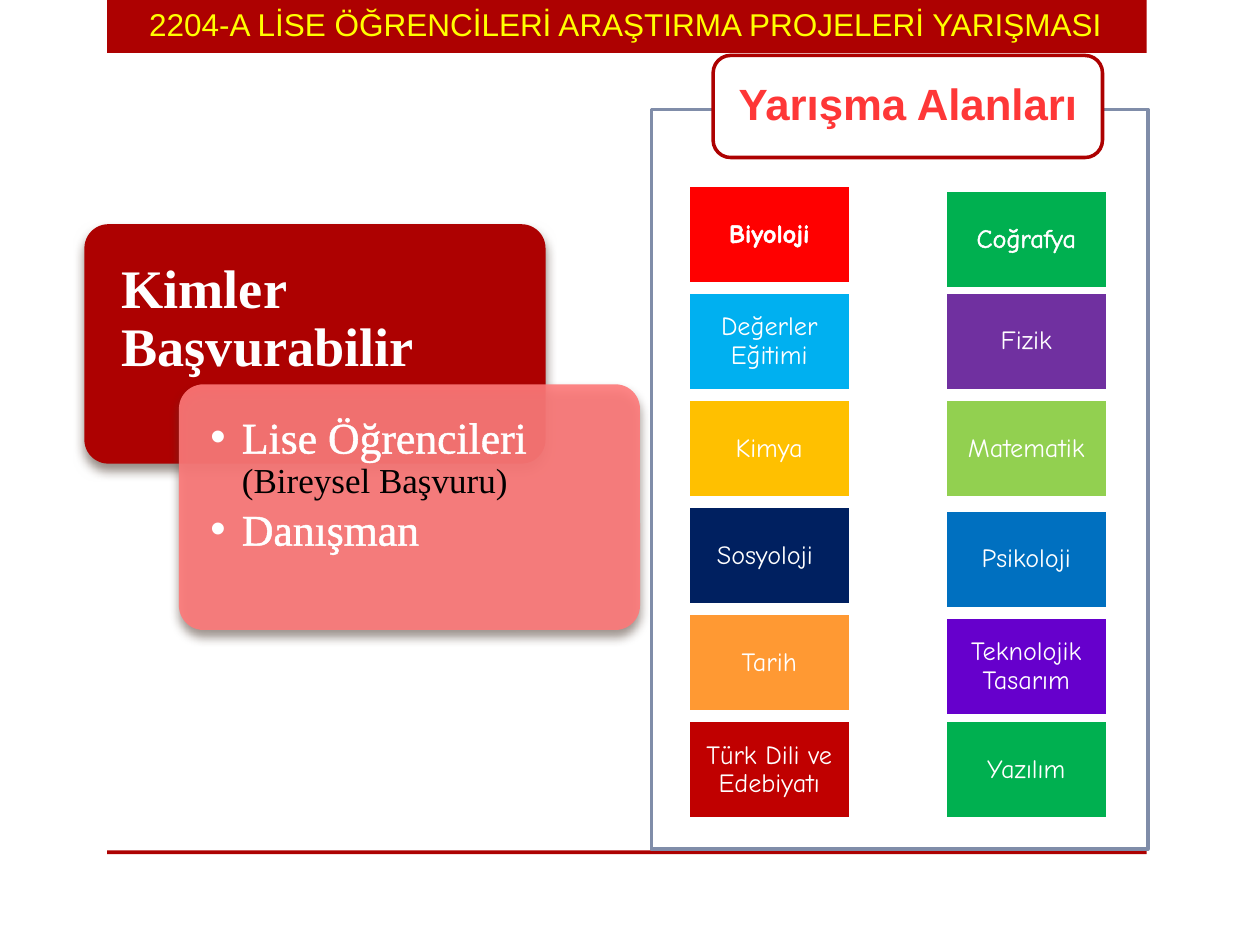
from dataclasses import dataclass

from lxml.etree import SubElement
from pptx import Presentation
from pptx.dml.color import RGBColor
from pptx.enum.shapes import MSO_SHAPE
from pptx.enum.text import MSO_ANCHOR, MSO_AUTO_SIZE, PP_ALIGN
from pptx.oxml import parse_xml
from pptx.oxml.ns import nsdecls, qn
from pptx.util import Inches, Pt


@dataclass(frozen=True)
class Theme:
    red: str = "AD0101"
    pink: str = "FE7979"
    heading: str = "FE3737"
    frame: str = "808DA9"
    shadow: str = "4E3B30"
    white: str = "FFFFFF"
    black: str = "000000"
    yellow: str = "FFFF00"
    sans: str = "Arial"
    serif: str = "Times New Roman"
    hand: str = "Comic Neue"
    card_size: int = 31
    large: int = 25
    note: int = 20
    title: int = 18
    tile: int = 15


class SlideBuilder:
    def __init__(self, prs, theme):
        self.theme = theme
        self.s = prs.slides.add_slide(prs.slide_layouts[1])

    def box(self, at, fill, line=None, rounded=None):
        kind = MSO_SHAPE.RECTANGLE if rounded is None else MSO_SHAPE.ROUNDED_RECTANGLE
        sp = self.s.shapes.add_shape(kind, *map(Inches, at))
        sp.shadow.inherit = False
        sp.fill.solid()
        sp.fill.fore_color.rgb = RGBColor.from_string(fill)
        if rounded is not None:
            sp.adjustments[0] = rounded
        if line:
            sp.line.color.rgb = RGBColor.from_string(line)
            sp.line.width = Pt(2)
        else:
            sp.line.fill.background()
        return sp

    def card(self, at, fill, opacity=100):
        sp = self.box(at, fill, rounded=0.1)
        color = sp.element.spPr.find(qn("a:solidFill"))[0]
        SubElement(color, qn("a:alpha"), val=str(opacity * 1000))
        effects = sp.element.spPr.find(qn("a:effectLst"))
        effects.append(parse_xml(
            f'<a:outerShdw {nsdecls("a")} blurRad="{Pt(6)}" dist="{Pt(4)}" '
            f'dir="5400000" rotWithShape="0"><a:srgbClr val="{self.theme.shadow}">'
            '<a:alpha val="60000"/></a:srgbClr></a:outerShdw>'))
        return sp

    def frame_text(self, sp, insets, anchor=MSO_ANCHOR.TOP):
        tf = sp.text_frame
        sides = ("margin_left", "margin_top", "margin_right", "margin_bottom")
        values = {"word_wrap": True, "auto_size": MSO_AUTO_SIZE.NONE,
                  "vertical_anchor": anchor, **dict(zip(sides, map(Inches, insets)))}
        for name, value in values.items():
            setattr(tf, name, value)
        return tf

    def paragraph(self, p, align=PP_ALIGN.LEFT, spacing=0.9, after=0):
        values = {"alignment": align, "line_spacing": spacing,
                  "space_before": Pt(0), "space_after": Pt(after)}
        for name, value in values.items():
            setattr(p, name, value)

    def run(self, p, text, font, size, color, bold=False, outline=False):
        r = p.add_run()
        r.text = text
        values = {"name": font, "size": Pt(size), "bold": bold}
        for name, value in values.items():
            setattr(r.font, name, value)
        r.font.color.rgb = RGBColor.from_string(color)
        if outline:
            r.font.element.insert(0, parse_xml(
                f'<a:ln {nsdecls("a")} w="{Pt(1.45)}"><a:solidFill>'
                f'<a:srgbClr val="{color}"/></a:solidFill></a:ln>'
            )) if hasattr(r.font, "element") else r._r.get_or_add_rPr().insert(0, parse_xml(
                f'<a:ln {nsdecls("a")} w="{Pt(1.45)}"><a:solidFill>'
                f'<a:srgbClr val="{color}"/></a:solidFill></a:ln>'))

    def label(self, sp, text, insets, font, size, color, anchor=MSO_ANCHOR.MIDDLE,
              align=PP_ALIGN.CENTER, **emphasis):
        p = self.frame_text(sp, insets, anchor).paragraphs[0]
        self.paragraph(p, align)
        self.run(p, text, font, size, color, **emphasis)

    def placeholder(self, index, at):
        sp = self.s.placeholders[index]
        for name, value in zip(("left", "top", "width", "height"), at):
            setattr(sp, name, Inches(value))
        sp.element.getparent().append(sp.element)
        return sp

    def title(self, text, at):
        t = self.theme
        sp = self.placeholder(0, at)
        p = self.frame_text(sp, (0.1, 0.05, 0.1, 0.05)).paragraphs[0]
        self.paragraph(p, PP_ALIGN.CENTER, 1.0)
        self.run(p, text, t.sans, t.title, t.yellow)

    def bullets(self, items, at):
        t = self.theme
        tf = self.frame_text(self.placeholder(1, at), (0.19,) * 4)
        for i, (text, note) in enumerate(items):
            p = tf.add_paragraph() if i else tf.paragraphs[0]
            self.paragraph(p, after=4)
            pPr = p._p.get_or_add_pPr()
            pPr.set("marL", str(Inches(0.25)))
            pPr.set("indent", str(-Inches(0.25)))
            SubElement(pPr, qn("a:buChar"), char="•")
            self.run(p, text, t.serif, t.large, t.white, outline=True)
            if note:
                self.run(p, note, t.serif, t.note, t.black)

    def tile(self, left, top, text, fill, **emphasis):
        t = self.theme
        sp = self.box((left, top, 1.29, 0.78), fill, t.white)
        self.label(sp, text, (0.06,) * 4, t.hand, t.tile, t.white, **emphasis)


COLUMNS = (
    (5.46, (
        ("Biyoloji", "FF0000", 0, {"bold": True, "outline": True}),
        ("Değerler Eğitimi", "00B0F0", 0, {}),
        ("Kimya", "FFC000", 0, {}),
        ("Sosyoloji ", "002060", 0, {}),
        ("Tarih", "FF9933", 0, {}),
        ("Türk Dili ve Edebiyatı", "C00000", 0, {}),
    )),
    (7.5, (
        ("Coğrafya", "00B050", 0.04, {"outline": True}),
        ("Fizik", "7030A0", 0, {}),
        ("Matematik", "92D050", 0, {}),
        ("Psikoloji", "0070C0", 0.03, {}),
        ("Teknolojik Tasarım", "6600CC", 0.03, {}),
        ("Yazılım", "00B050", 0, {}),
    )),
)


def main():
    prs = Presentation()
    prs.slide_width, prs.slide_height = Inches(10), Inches(7.5)
    t = Theme()
    b = SlideBuilder(prs, t)

    for top, height in ((0, 0.42), (6.75, 0.03)):
        b.box((0.85, top, 8.25, height), t.red)

    who = b.card((0.67, 1.78, 3.66, 1.9), t.red)
    b.label(who, "Kimler Başvurabilir", (0.24, 0.24, 0.24, 0.13), t.serif, t.card_size,
            t.white, MSO_ANCHOR.TOP, PP_ALIGN.LEFT, bold=True)
    b.card((1.42, 3.05, 3.66, 1.95), t.pink, 90)
    b.bullets((("Lise Öğrencileri ", "(Bireysel Başvuru)"), ("Danışman", "")),
              (1.48, 3.11, 3.55, 1.84))

    b.box((5.17, 0.87, 3.94, 5.87), t.white, t.frame)
    heading = b.box((5.66, 0.44, 3.09, 0.81), t.white, t.red, 0.17)
    b.label(heading, "Yarışma Alanları", (0.12, 0, 0.12, 0), t.sans, t.large,
            t.heading, bold=True)

    for left, fields in COLUMNS:
        for row, (text, fill, shift, emphasis) in enumerate(fields):
            b.tile(left, 1.47 + 0.85 * row + shift, text, fill, **emphasis)

    b.title("2204-A LİSE ÖĞRENCİLERİ ARAŞTIRMA PROJELERİ YARIŞMASI",
            (0.83, -0.01, 8.27, 0.4))
    prs.save("out.pptx")


if __name__ == "__main__":
    main()
